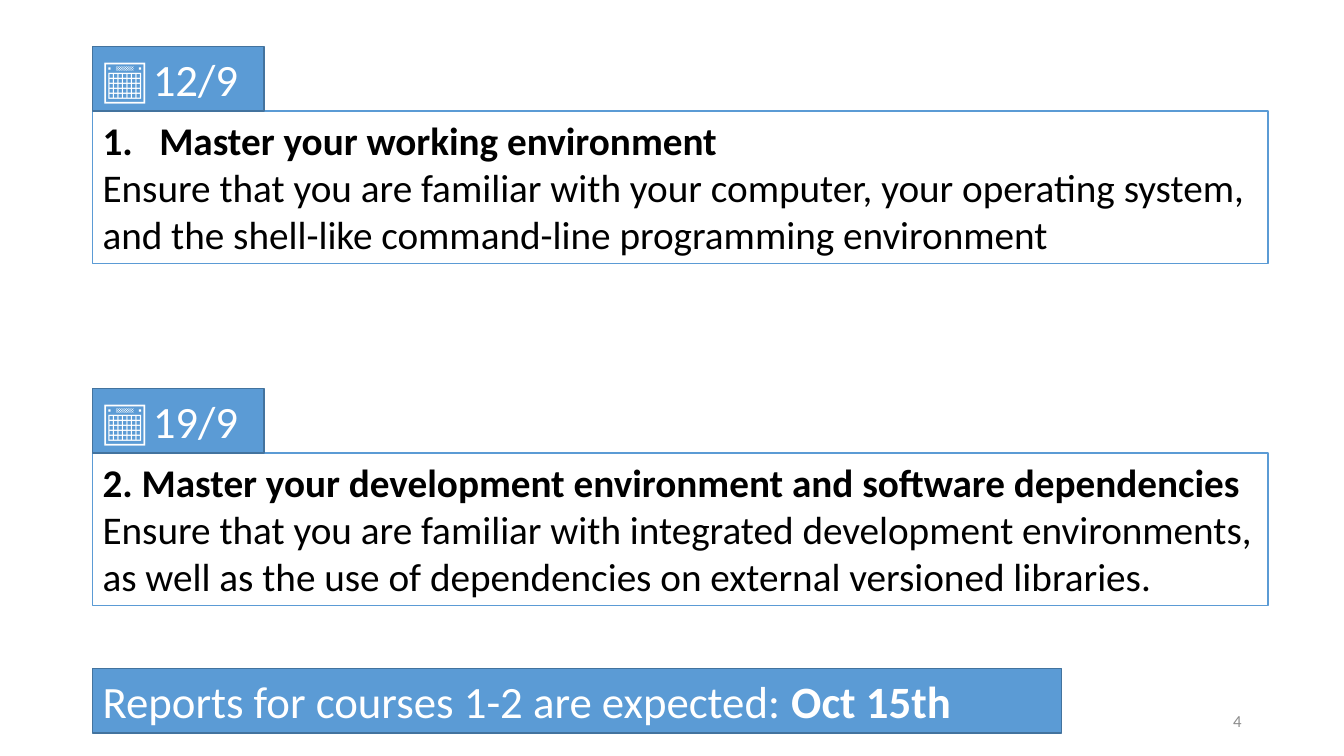
from dataclasses import dataclass

from pptx import Presentation
from pptx.dml.color import RGBColor
from pptx.enum import shapes, text
from pptx.oxml.ns import qn
from pptx.util import Pt


@dataclass(frozen=True)
class Theme:
    font: str = "Calibri"
    blue: RGBColor = RGBColor(0x5B, 0x9B, 0xD5)
    dark_blue: RGBColor = RGBColor(0x43, 0x73, 0x9E)
    white: RGBColor = RGBColor(0xFF, 0xFF, 0xFF)
    black: RGBColor = RGBColor(0, 0, 0)
    grey: RGBColor = RGBColor(0x8C, 0x8C, 0x8C)
    banner: int = 32
    body: int = 28
    gap: int = 18
    footer: int = 12


THEME = Theme()
LEFT = 66.2
TAB_HEIGHT = 46


def style(font, size, color, bold=False):
    font.name = THEME.font
    font.size = Pt(size)
    font.color.rgb = color
    font.bold = bold


def add_box(slide, top, width, height, fill, line):
    """Outlined rectangle on the left margin, with top-left text."""
    box = slide.shapes.add_shape(
        shapes.MSO_SHAPE.RECTANGLE, Pt(LEFT), Pt(top), Pt(width), Pt(height))
    box.shadow.inherit = False
    box.fill.solid()
    box.fill.fore_color.rgb = fill
    box.line.color.rgb = line
    box.line.width = Pt(1)
    frame = box.text_frame
    frame.word_wrap = True
    frame.auto_size = text.MSO_AUTO_SIZE.SHAPE_TO_FIT_TEXT
    frame.vertical_anchor = text.MSO_ANCHOR.TOP
    frame.paragraphs[0].alignment = text.PP_ALIGN.LEFT
    return frame


def add_banner(slide, top, width, parts):
    """Blue box; parts are (wording, size, bold)."""
    frame = add_box(slide, top, width, TAB_HEIGHT, THEME.blue, THEME.dark_blue)
    for wording, size, bold in parts:
        run = frame.paragraphs[0].add_run()
        run.text = wording
        style(run.font, size, THEME.white, bold)
    return frame


def number_paragraph(paragraph, indent):
    properties = paragraph._p.get_or_add_pPr()
    properties.set("marL", str(Pt(indent)))
    properties.set("indent", str(-Pt(indent)))
    number = properties.makeelement(qn("a:buAutoNum"), {"type": "arabicPeriod"})
    properties.append(number)


def add_course(slide, top, date, title, description, numbered=False):
    """White course box with a date tab on its top edge."""
    course = add_box(slide, top + TAB_HEIGHT, 839.5, 109, THEME.white, THEME.blue)
    heading, details = course.paragraphs[0], course.add_paragraph()
    if numbered:
        number_paragraph(heading, 40.5)
    for paragraph, wording, bold in ((heading, title, True),
                                     (details, description, False)):
        paragraph.text = wording
        paragraph.alignment = text.PP_ALIGN.LEFT
        style(paragraph.font, THEME.body, THEME.black, bold)

    tab = add_banner(slide, top, 122.4, [
        ("📅", THEME.banner, False),
        (" ", THEME.gap, False),
        (date, THEME.banner, False)])
    tab.word_wrap = False


def add_page_number(slide, number):
    footer = slide.shapes.add_textbox(Pt(678), Pt(500.5), Pt(216), Pt(28.75))
    frame = footer.text_frame
    frame.word_wrap = True
    frame.vertical_anchor = text.MSO_ANCHOR.MIDDLE
    paragraph = frame.paragraphs[0]
    paragraph.text = number
    paragraph.alignment = text.PP_ALIGN.RIGHT
    style(paragraph.font, THEME.footer, THEME.grey)


def main():
    deck = Presentation()
    deck.slide_width, deck.slide_height = Pt(960), Pt(540)
    slide = deck.slides.add_slide(deck.slide_layouts[6])

    add_page_number(slide, "4")

    # Courses
    add_course(
        slide, 33.3, "12/9", "Master your working environment",
        "Ensure that you are familiar with your computer, your operating system, "
        "and the shell-like command-line programming environment", numbered=True)
    add_course(
        slide, 277.6, "19/9",
        "2. Master your development environment and software dependencies",
        "Ensure that you are familiar with integrated development environments, "
        "as well as the use of dependencies on external versioned libraries.")

    # Deadline
    add_banner(slide, 477.5, 692, [
        ("Reports for courses 1-2 are expected: ", THEME.banner, False),
        ("Oct 15th", THEME.banner, True)])

    deck.save("out.pptx")


if __name__ == "__main__":
    main()
